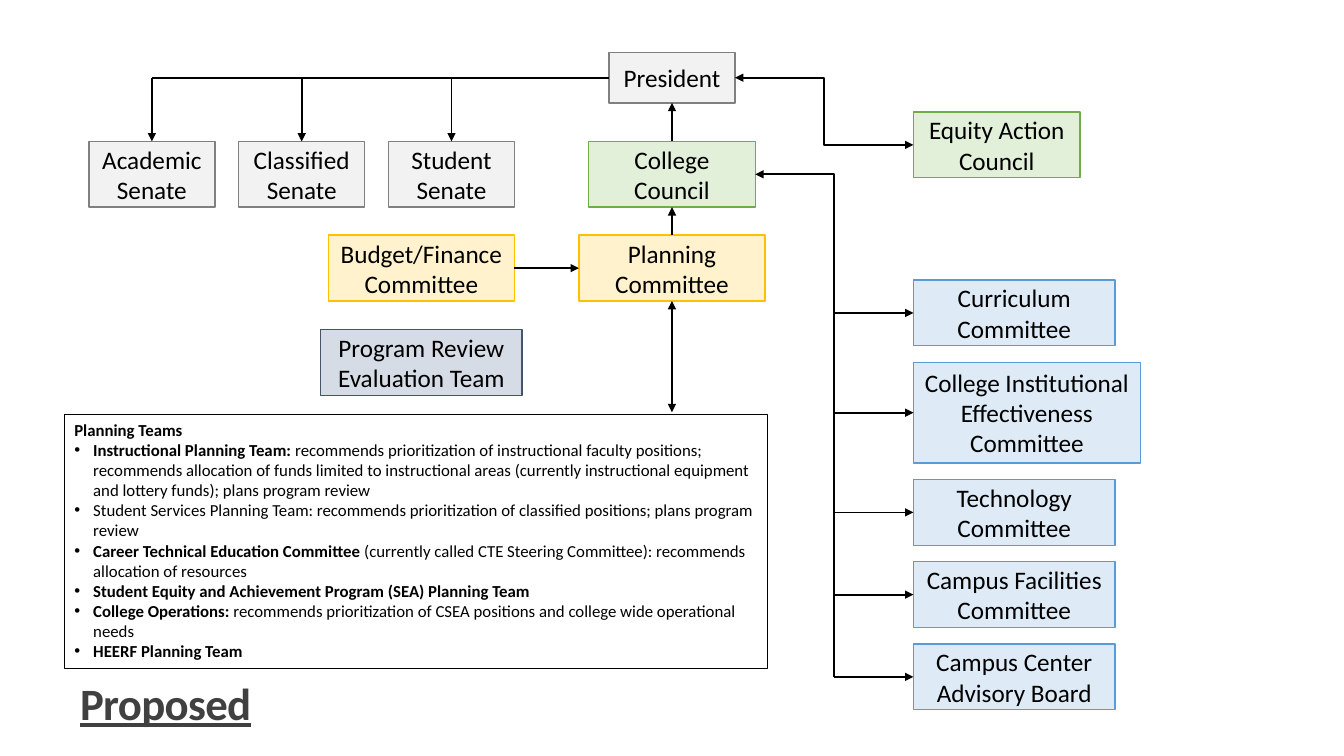
from collections import namedtuple

from lxml.etree import SubElement
from pptx import Presentation
from pptx.dml.color import RGBColor
from pptx.enum.shapes import MSO_CONNECTOR, MSO_SHAPE
from pptx.enum.text import MSO_ANCHOR, MSO_AUTO_SIZE, PP_ALIGN
from pptx.oxml.ns import qn
from pptx.util import Pt

BLACK = RGBColor(0x00, 0x00, 0x00)
CHARCOAL = RGBColor(0x40, 0x40, 0x40)
# Fill and outline pairs
GREY = RGBColor(0xF2, 0xF2, 0xF2), RGBColor(0x80, 0x80, 0x80)
GREEN = RGBColor(0xE2, 0xF0, 0xD9), RGBColor(0x70, 0xAD, 0x47)
YELLOW = RGBColor(0xFF, 0xF2, 0xCC), RGBColor(0xFF, 0xC0, 0x00)
SLATE = RGBColor(0xD6, 0xDC, 0xE5), RGBColor(0x44, 0x54, 0x6A)
BLUE = RGBColor(0xDE, 0xEB, 0xF7), RGBColor(0x5B, 0x9B, 0xD5)

TOP, LEFT, BOTTOM, RIGHT = range(4)
BODY_HEIGHT = 47  # height of a two-line body
Box = namedtuple("Box", "left top width height")

SENATES = ["Academic\nSenate", "Classified\nSenate", "Student\nSenate"]
COMMITTEES = [  # name, width, height
    ("Curriculum Committee", 144, BODY_HEIGHT),
    ("College Institutional Effectiveness Committee", 162, 72),
    ("Technology Committee", 144, BODY_HEIGHT),
    ("Campus Facilities Committee", 144, BODY_HEIGHT),
    ("Campus Center Advisory Board", 144, BODY_HEIGHT),
]
TEAMS = [  # bold lead, plain rest
    ("Instructional Planning Team: ",
     "recommends prioritization of instructional faculty positions; recommends "
     "allocation of funds limited to instructional areas (currently instructional "
     "equipment and lottery funds); plans program review"),
    ("", "Student Services Planning Team: recommends prioritization of classified "
     "positions; plans program review"),
    ("Career Technical Education Committee ",
     "(currently called CTE Steering Committee): recommends allocation of resources"),
    ("Student Equity and Achievement Program (SEA) Planning Team", ""),
    ("College Operations: ",
     "recommends prioritization of CSEA positions and college wide operational needs"),
    ("HEERF Planning Team", ""),
]


def add_span(para, text, size=18, color=BLACK, bold=False, underline=False):
    span = para.add_run()
    span.text = text
    font = span.font
    font.name, font.size, font.bold, font.underline = "Calibri", Pt(size), bold, underline
    font.color.rgb = color
    return span


def add_rectangle(page, box, outline, weight, fill=None):
    shape = page.shapes.add_shape(MSO_SHAPE.RECTANGLE, *map(Pt, box))
    shape.shadow.inherit = False
    if fill is None:
        shape.fill.background()
    else:
        shape.fill.solid()
        shape.fill.fore_color.rgb = fill
    shape.line.color.rgb = outline
    shape.line.width = Pt(weight)
    shape.text_frame.word_wrap = True
    return shape


def add_body(page, text, box, colors):
    fill, outline = colors
    shape = add_rectangle(page, box, outline, 1, fill)
    frame = shape.text_frame
    frame.vertical_anchor = MSO_ANCHOR.MIDDLE
    for index, line in enumerate(text.split("\n")):
        para = frame.add_paragraph() if index else frame.paragraphs[0]
        para.alignment = PP_ALIGN.CENTER
        add_span(para, line)
    return shape


def add_link(page, start, end, heads=("tailEnd",), kind=MSO_CONNECTOR.STRAIGHT):
    """Each end is an (x, y) point or a (shape, side) pair."""
    link = page.shapes.add_connector(kind, 0, 0, 0, 0)
    if isinstance(start[0], (int, float)):
        link.begin_x, link.begin_y = map(Pt, start)
    else:
        link.begin_connect(*start)
    if isinstance(end[0], (int, float)):
        link.end_x, link.end_y = map(Pt, end)
    else:
        link.end_connect(*end)
    link.line.color.rgb = BLACK
    link.line.width = Pt(1.25)
    for head in heads:
        SubElement(link.line._get_or_add_ln(), qn("a:" + head), type="triangle")
    SubElement(link._element.spPr, qn("a:effectLst"))
    return link


def draw_senates(page, box, president):
    width, step = 90, (box.width - 90) / (len(SENATES) - 1)
    rail = box.top
    for index, name in enumerate(SENATES):
        left = box.left + index * step
        top = box.top + box.height - BODY_HEIGHT
        senate = add_body(page, name, Box(left, top, width, BODY_HEIGHT), GREY)
        add_link(page, (left + width / 2, rail), (senate, TOP))
    add_link(page, (president, LEFT), (box.left + width / 2, rail), heads=())


def draw_leadership(page, box):
    """Stack president, council and planning committee on one axis."""
    axis = box.left + box.width / 2
    president = add_body(page, "President", Box(axis - 45, box.top, 90, 36), GREY)
    council = add_body(page, "College Council",
                       Box(axis - 59.5, box.top + 63.5, 119, BODY_HEIGHT), GREEN)
    planning = add_body(page, "Planning Committee",
                        Box(box.left, box.top + box.height - BODY_HEIGHT,
                            box.width, BODY_HEIGHT), YELLOW)
    add_link(page, (council, TOP), (president, BOTTOM))
    add_link(page, (planning, TOP), (council, BOTTOM))
    return president, council, planning


def draw_support(page, box, planning):
    budget = add_body(page, "Budget/Finance Committee",
                      Box(box.left + 5.5, box.top, 133, BODY_HEIGHT), YELLOW)
    add_body(page, "Program Review Evaluation Team",
             Box(box.left, box.top + box.height - BODY_HEIGHT, box.width, BODY_HEIGHT), SLATE)
    add_link(page, (budget, RIGHT), (planning, LEFT))


def draw_equity(page, box, president):
    equity = add_body(page, "Equity Action Council", box, GREEN)
    add_link(page, (president, RIGHT), (equity, LEFT),
             heads=("headEnd", "tailEnd"), kind=MSO_CONNECTOR.ELBOW)


def draw_committees(page, box, council, spine):
    gap = (box.height - sum(height for _, _, height in COMMITTEES)) / (len(COMMITTEES) - 1)
    top = box.top
    middles = []
    for index, (name, width, height) in enumerate(COMMITTEES):
        committee = add_body(page, name, Box(box.left, top, width, height), BLUE)
        middles.append(top + height / 2)
        if index == 0:
            add_link(page, (council, RIGHT), (committee, LEFT),
                     heads=("headEnd", "tailEnd"), kind=MSO_CONNECTOR.ELBOW)
        else:
            add_link(page, (spine, middles[-1]), (committee, LEFT))
        top += height + gap
    add_link(page, (spine, middles[-1]), (spine, middles[0]), heads=())


def draw_teams(page, box, planning, axis):
    frame = add_rectangle(page, box, BLACK, 0.75).text_frame
    frame.vertical_anchor = MSO_ANCHOR.TOP
    frame.auto_size = MSO_AUTO_SIZE.SHAPE_TO_FIT_TEXT
    heading = frame.paragraphs[0]
    heading.alignment = PP_ALIGN.LEFT
    add_span(heading, "Planning Teams", size=12, bold=True)
    for lead, rest in TEAMS:
        para = frame.add_paragraph()
        para.alignment = PP_ALIGN.LEFT
        properties = para._p.get_or_add_pPr()
        properties.set("marL", str(Pt(13.5)))
        properties.set("indent", str(-Pt(13.5)))
        SubElement(properties, qn("a:buFont"), typeface="Arial")
        SubElement(properties, qn("a:buChar"), char="•")
        for text, bold in ((lead, True), (rest, False)):
            if text:
                add_span(para, text, size=12, bold=bold)
    add_link(page, (axis, box.top - 1.5), (planning, BOTTOM), heads=("headEnd", "tailEnd"))


def draw_title(page, box):
    title = page.shapes.title
    title.left, title.top, title.width, title.height = map(Pt, box)
    frame = title.text_frame
    frame.word_wrap = True
    frame.auto_size = MSO_AUTO_SIZE.NONE
    frame.vertical_anchor = MSO_ANCHOR.BOTTOM
    para = frame.paragraphs[0]
    para.alignment = PP_ALIGN.LEFT
    para.line_spacing = 0.85
    span = add_span(para, "Proposed", size=32, color=CHARCOAL, bold=True, underline=True)
    span.font._element.set("spc", "-50")


def main():
    deck = Presentation()
    deck.slide_width, deck.slide_height = Pt(960), Pt(540)
    page = deck.slides.add_slide(deck.slide_layouts[5])
    president, council, planning = draw_leadership(page, Box(413.5, 37.5, 133, 177.5))
    draw_senates(page, Box(63.5, 55.5, 304, 92.5), president)
    draw_support(page, Box(229, 168, 144, 114.5), planning)
    draw_equity(page, Box(652.5, 80, 119, BODY_HEIGHT), president)
    draw_committees(page, Box(652.5, 200, 162, 307), council, spine=596)
    draw_teams(page, Box(46, 296, 502.5, 181.5), planning, axis=480)
    draw_title(page, Box(50, 482, 194, 43))
    deck.save("out.pptx")


if __name__ == "__main__":
    main()
